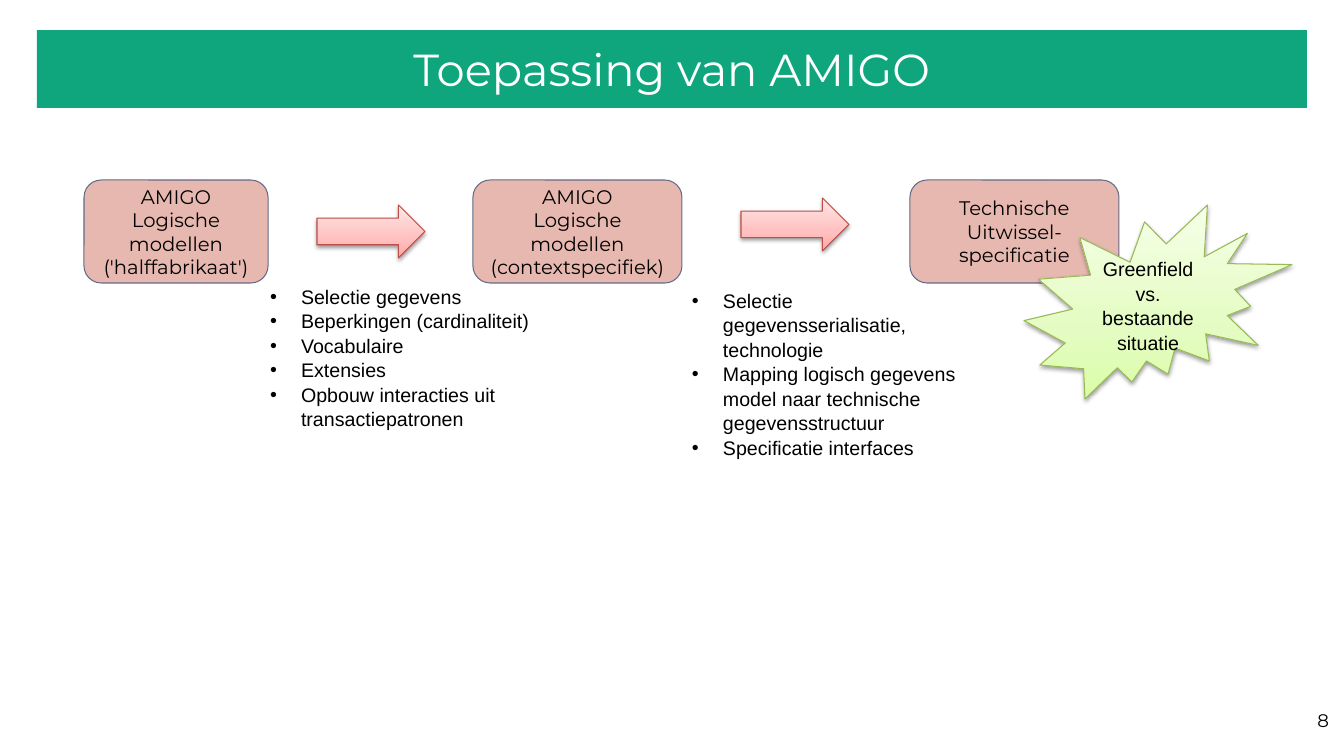
from lxml import etree
from pptx import Presentation
from pptx.dml.color import RGBColor as RGB
from pptx.enum.shapes import MSO_SHAPE as Kind
from pptx.enum.text import MSO_ANCHOR as Anchor, MSO_AUTO_SIZE as Fit, PP_ALIGN as Align
from pptx.oxml import parse_xml
from pptx.oxml.ns import qn
from pptx.util import Emu, Pt

SCALE = 914400 / 100.8
NS = 'xmlns:a="http://schemas.openxmlformats.org/drawingml/2006/main"'


def px(*nums):
    return [Emu(round(n * SCALE)) for n in nums]


def write(shape, text, size=14, font="Arial", color="000000", align=Align.CENTER,
          anchor=Anchor.MIDDLE, inset=(10, 10), fit=Fit.NONE, gap=1.0, bullet=False):
    frame = shape.text_frame
    frame.word_wrap = True
    frame.auto_size = fit
    frame.vertical_anchor = anchor
    side, edge = px(*inset)
    frame.margin_left = frame.margin_right = side
    frame.margin_top = frame.margin_bottom = edge
    frame.text = text
    for para in frame.paragraphs:
        para.alignment = align
        para.line_spacing = gap
        para.space_before = Pt(0)
        if bullet:
            props = para._p.get_or_add_pPr()
            hang = px(31)[0]
            props.set("marL", str(hang))
            props.set("indent", str(-hang))
            tint = etree.SubElement(props, qn("a:buClr"))
            etree.SubElement(tint, qn("a:srgbClr"), val=color)
            etree.SubElement(props, qn("a:buFont"), typeface="Arial")
            etree.SubElement(props, qn("a:buChar"), char="•")
        para.font.size = Pt(size)
        para.font.name = font
        para.font.bold = False
        para.font.color.rgb = RGB.from_string(color)


deck = Presentation()
deck.slide_width, deck.slide_height = px(1344, 756)
slide = deck.slides.add_slide(deck.slide_layouts[3])
shapes = slide.shapes
title, left, right = slide.placeholders

title.left, title.top, title.width, title.height = px(37, 30, 1270, 78)
title.fill.solid()
title.fill.fore_color.rgb = RGB.from_string("0FA67E")
write(title, "Toepassing van AMIGO", size=32, font="Montserrat", color="FFFFFF")

number = shapes.add_textbox(*px(1258, 699, 81, 57))
write(number, "8", size=13, font="Montserrat", align=Align.RIGHT, anchor=Anchor.TOP)

lists = [
    (left, (260, 279, 286, 201), [
        "Selectie gegevens", "Beperkingen (cardinaliteit)", "Vocabulaire",
        "Extensies", "Opbouw interacties uit transactiepatronen"]),
    (right, (682, 283, 286, 176), [
        "Selectie gegevensserialisatie, technologie",
        "Mapping logisch gegevens model naar technische gegevensstructuur",
        "Specificatie interfaces"]),
]
for body, place, items in lists:
    body.left, body.top, body.width, body.height = px(*place)
    write(body, "\n".join(items), align=Align.LEFT, anchor=Anchor.TOP,
          inset=(10, 5), fit=Fit.SHAPE_TO_FIT_TEXT, gap=1.04, bullet=True)

stages = [
    (84, 184, "AMIGO\nLogische modellen ('halffabrikaat')"),
    (473, 209, "AMIGO\nLogische modellen (contextspecifiek)"),
    (910, 209, "Technische\nUitwissel-specificatie"),
]
for x, width, text in stages:
    stage = shapes.add_shape(Kind.ROUNDED_RECTANGLE, *px(x, 180, width, 103))
    stage.shadow.inherit = False
    stage.fill.solid()
    stage.fill.fore_color.rgb = RGB.from_string("E6B8AF")
    stage.line.color.rgb = RGB.from_string("646B86")
    stage.line.width = Pt(0.75)
    write(stage, text, font="Montserrat")

pinks = ("FFA6A5", "FFC0BF", "FFE7E7")
greens = ("DAFDA7", "E4FCC2", "F5FFE7")
glossy = [
    (Kind.RIGHT_ARROW, (317, 205, 108, 53), pinks, "BF4C48", ""),
    (Kind.RIGHT_ARROW, (741, 198, 108, 53), pinks, "BF4C48", ""),
    (Kind.EXPLOSION2, (1024, 205, 268, 194), greens, "98B955",
     "Greenfield vs. bestaande situatie"),
]
for kind, place, tones, edge, text in glossy:
    shape = shapes.add_shape(kind, *px(*place))
    shape.line.color.rgb = RGB.from_string(edge)
    shape.line.width = Pt(0.75)
    shape.shadow.inherit = False
    props = shape._element.spPr
    stops = "".join(f'<a:gs pos="{pos}"><a:srgbClr val="{tone}"/></a:gs>'
                    for pos, tone in zip((0, 35000, 100000), tones))
    props.find(qn("a:prstGeom")).addnext(parse_xml(
        f'<a:gradFill {NS} rotWithShape="1"><a:gsLst>{stops}</a:gsLst>'
        '<a:lin ang="16200000" scaled="0"/></a:gradFill>'))
    props.find(qn("a:effectLst")).append(parse_xml(
        f'<a:outerShdw {NS} blurRad="39370" dist="20320" dir="5400000" rotWithShape="0">'
        '<a:srgbClr val="000000"><a:alpha val="38000"/></a:srgbClr></a:outerShdw>'))
    if text:
        write(shape, text, inset=(10, 5), gap=1.04)

deck.save("out.pptx")
